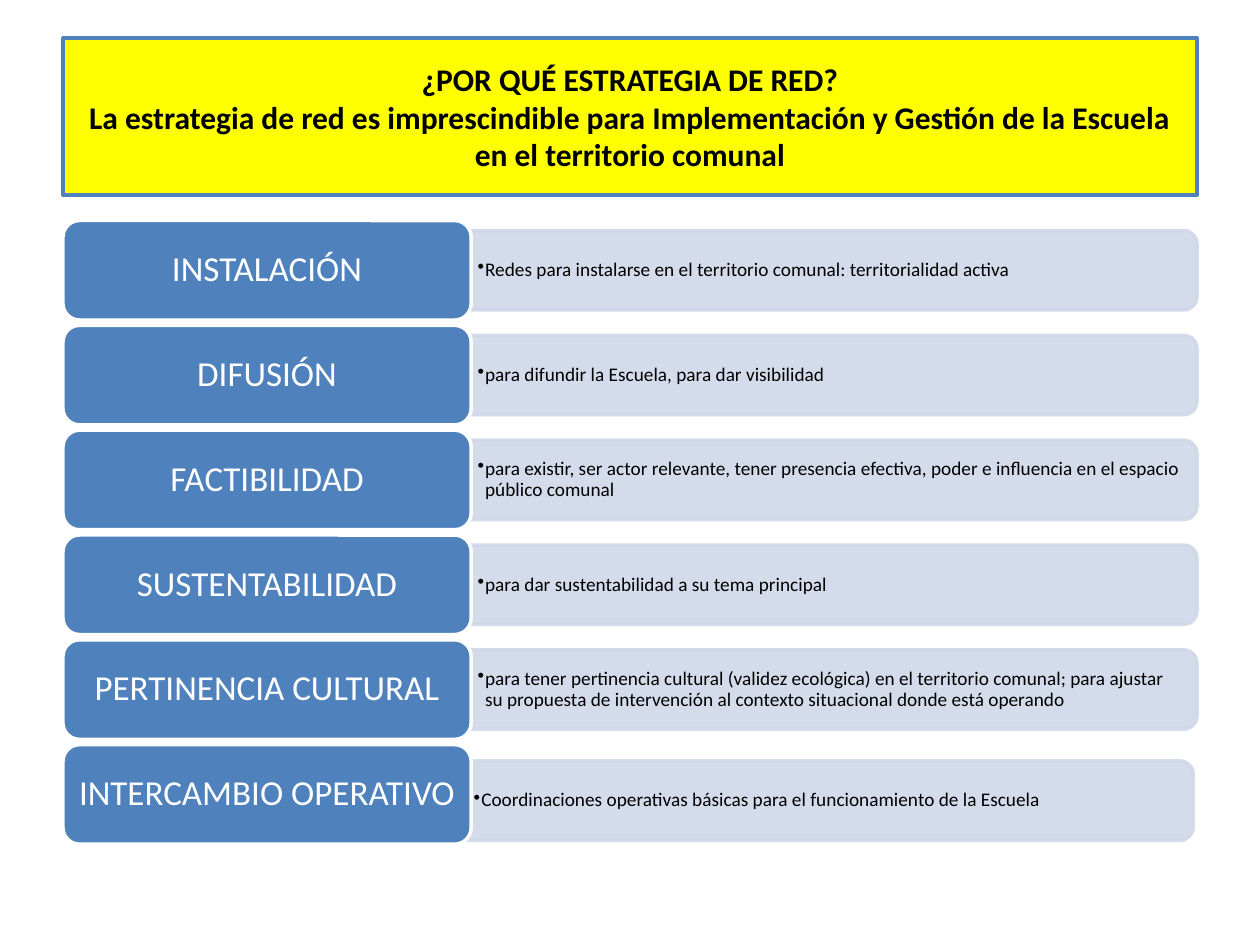
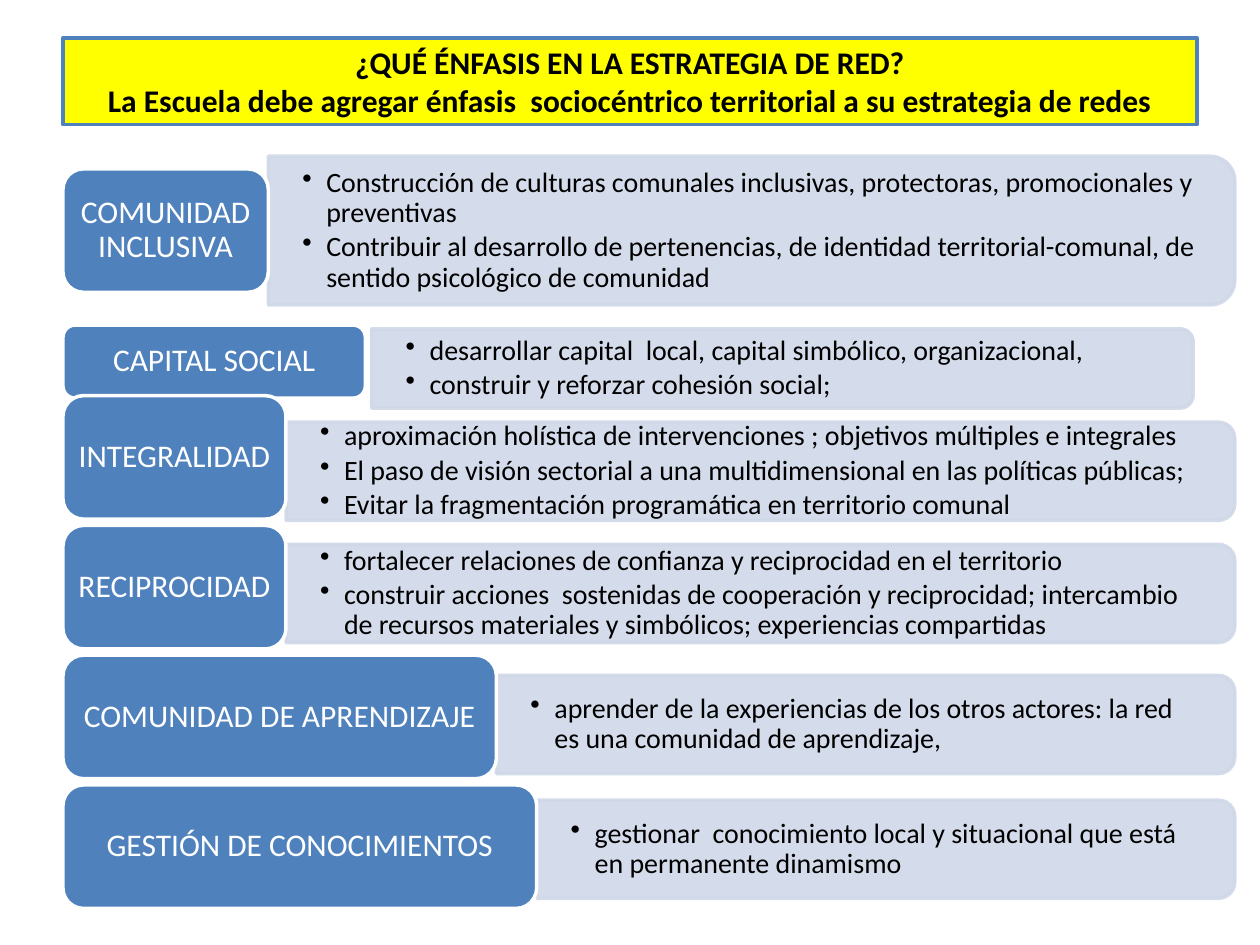
from collections import namedtuple

from lxml.etree import SubElement
from pptx import Presentation
from pptx.dml.color import RGBColor
from pptx.enum.shapes import MSO_SHAPE as Preset
from pptx.enum.text import MSO_ANCHOR as Anchor, MSO_AUTO_SIZE as AutoSize, PP_ALIGN as Align
from pptx.oxml.ns import qn
from pptx.util import Inches, Pt

Box = namedtuple("Box", "left top width height")
Style = namedtuple("Style", "label_size label_inset text_size text_inset indent")

YELLOW, BLUE, PALE, WHITE, BLACK = "FFFF00", "4F81BD", "D0D8E8", "FFFFFF", "000000"
FONT = "Calibri"
MARGIN = 0.5
PALE_ALPHA = "90000"

REASON_STYLE = Style(20, (0.08, 0.04), 11, (0.05, 0.02), 0.06)
EMPHASIS_STYLE = Style(18, (0.07, 0.04), 16, (0.27, 0.14), 0.19)

REASONS_TITLE = (
    "¿POR QUÉ ESTRATEGIA DE RED?\v"
    "La estrategia de red es imprescindible para Implementación y Gestión de la Escuela "
    "en el territorio comunal"
)
REASONS = [
    ("INSTALACIÓN", "Redes para instalarse en el territorio comunal: territorialidad activa"),
    ("DIFUSIÓN", "para difundir la Escuela, para dar visibilidad"),
    ("FACTIBILIDAD", "para existir, ser actor relevante, tener presencia efectiva, poder e "
     "influencia en el espacio público comunal"),
    ("SUSTENTABILIDAD", "para dar sustentabilidad a su tema principal"),
    ("PERTINENCIA CULTURAL", "para tener pertinencia cultural (validez ecológica) en el "
     "territorio comunal; para ajustar su propuesta de intervención al contexto situacional "
     "donde está operando"),
    ("INTERCAMBIO OPERATIVO",
     "Coordinaciones operativas básicas para el funcionamiento de la Escuela"),
]

EMPHASES_TITLE = (
    "¿QUÉ ÉNFASIS EN LA ESTRATEGIA DE RED?\v"
    "La Escuela debe agregar énfasis  sociocéntrico territorial a su estrategia de redes"
)
EMPHASES = [
    ("COMUNIDAD INCLUSIVA", Box(MARGIN, 1.34, 1.63, 0.98), Box(2.13, 1.24, 7.67, 1.18), [
        "Construcción de culturas comunales inclusivas, protectoras, promocionales y preventivas",
        "Contribuir al desarrollo de pertenencias, de identidad territorial-comunal, "
        "de sentido psicológico de comunidad"]),
    ("CAPITAL SOCIAL", Box(MARGIN, 2.58, 2.4, 0.58), Box(2.95, 2.61, 6.52, 0.63), [
        "desarrollar capital  local, capital simbólico, organizacional,",
        "construir y reforzar cohesión social;"]),
    ("INTEGRALIDAD", Box(MARGIN, 3.14, 1.77, 0.98), Box(2.27, 3.35, 7.53, 0.78), [
        "aproximación holística de intervenciones ; objetivos múltiples e integrales",
        "El paso de visión sectorial a una multidimensional en las políticas públicas;",
        "Evitar la fragmentación programática en territorio comunal"]),
    ("RECIPROCIDAD", Box(MARGIN, 4.17, 1.77, 0.98), Box(2.27, 4.32, 7.53, 0.78), [
        "fortalecer relaciones de confianza y reciprocidad en el territorio",
        "construir acciones  sostenidas de cooperación y reciprocidad; intercambio de recursos "
        "materiales y simbólicos; experiencias compartidas"]),
    ("COMUNIDAD DE APRENDIZAJE", Box(MARGIN, 5.2, 3.44, 0.98), Box(3.94, 5.36, 5.86, 0.78), [
        "aprender de la experiencias de los otros actores: la red es una comunidad de "
        "aprendizaje,"]),
    ("GESTIÓN DE CONOCIMIENTOS", Box(MARGIN, 6.23, 3.76, 0.98), Box(4.26, 6.35, 5.54, 0.78), [
        "gestionar  conocimiento local y situacional que está en permanente dinamismo"]),
]


def color(value):
    """Turn a hex string into a colour."""
    return RGBColor.from_string(value)


def set_all(target, values):
    """Set each attribute of the target from a dict."""
    for name, value in values.items():
        setattr(target, name, value)


def inches(box):
    """Give the sides of a box as lengths."""
    return [Inches(side) for side in box]


def paint(shape, fill, line):
    """Give a shape a solid fill and a two-point outline."""
    shape.fill.solid()
    shape.fill.fore_color.rgb = color(fill)
    shape.line.color.rgb = color(line)
    shape.line.width = Pt(2)


def set_frame(frame, inset):
    """Centre a wrapping text frame vertically inside its insets."""
    across, down = (Inches(side) for side in inset)
    set_all(frame, {
        "word_wrap": True, "auto_size": AutoSize.NONE, "vertical_anchor": Anchor.MIDDLE,
        "margin_left": across, "margin_right": across,
        "margin_top": down, "margin_bottom": down,
    })


def set_font(font, size, ink, bold=False):
    """Apply the deck's typeface with a size, colour and weight."""
    set_all(font, {"name": FONT, "size": Pt(size), "bold": bold})
    font.color.rgb = color(ink)


def add_title(page, text, height):
    """Turn the title placeholder into the yellow banner."""
    title = page.shapes.title
    banner = inches(Box(MARGIN, 0.3, 9, height))
    set_all(title, dict(zip(Box._fields, banner)))
    paint(title, YELLOW, BLUE)
    set_frame(title.text_frame, (0.1, 0.05))
    para = title.text_frame.paragraphs[0]
    para.text = text
    para.alignment = Align.CENTER
    for span in para.runs:
        set_font(span.font, 18, BLACK, True)


def add_band(page, box):
    """Draw a pale band rounded on its right side."""
    center_x, center_y = box.left + box.width / 2, box.top + box.height / 2
    upright = Box(center_x - box.height / 2, center_y - box.width / 2, box.height, box.width)
    band = page.shapes.add_shape(Preset.ROUND_2_SAME_RECTANGLE, *inches(upright))
    band.rotation = 90
    band.shadow.inherit = False
    paint(band, PALE, PALE)
    for tint in band._element.spPr.iter(qn("a:srgbClr")):
        SubElement(tint, qn("a:alpha"), val=PALE_ALPHA)


def add_bullets(page, box, items, style):
    """Write the bulleted items over a band."""
    area = Box(box.left, box.top + 0.03, box.width - 0.04, box.height - 0.06)
    frame = page.shapes.add_textbox(*inches(area)).text_frame
    set_frame(frame, style.text_inset)
    for index, item in enumerate(items):
        para = frame.add_paragraph() if index else frame.paragraphs[0]
        props = para._p.get_or_add_pPr()
        props.set("marL", str(Inches(style.indent)))
        props.set("indent", str(-Inches(style.indent)))
        SubElement(props, qn("a:buChar"), char="•")
        para.line_spacing = 0.9
        if index:
            para.space_before = Pt(0.15 * style.text_size)
        span = para.add_run()
        span.text = item
        set_font(span.font, style.text_size, BLACK)


def add_label(page, box, text, style):
    """Draw a blue rounded label with centred white text."""
    label = page.shapes.add_shape(Preset.ROUNDED_RECTANGLE, *inches(box))
    label.shadow.inherit = False
    paint(label, BLUE, WHITE)
    set_frame(label.text_frame, style.label_inset)
    para = label.text_frame.paragraphs[0]
    set_all(para, {"alignment": Align.CENTER, "line_spacing": 0.9})
    span = para.add_run()
    span.text = text
    set_font(span.font, style.label_size, WHITE)


def add_row(page, label, label_box, band_box, items, style):
    """Place a band, its bullets and its label."""
    add_band(page, band_box)
    add_bullets(page, band_box, items, style)
    add_label(page, label_box, label, style)


def add_page(deck, title, title_height):
    """Add a title-only slide with its banner."""
    page = deck.slides.add_slide(deck.slide_layouts[5])
    add_title(page, title, title_height)
    return page


def build_reasons(deck):
    """Build the slide of reasons as evenly spaced rows."""
    page = add_page(deck, REASONS_TITLE, 1.25)
    pitch = 0.832
    for index, (label, text) in enumerate(REASONS):
        label_box = Box(MARGIN, 1.75 + pitch * index, 3.24, 0.79)
        band_box = Box(3.74, label_box.top + 0.08, 5.76, 0.63)
        if index == len(REASONS) - 1:
            band_box = band_box._replace(left=3.71, top=6.04)
        add_row(page, label, label_box, band_box, [text], REASON_STYLE)


def build_emphases(deck):
    """Build the slide of emphases with labels of varied width."""
    page = add_page(deck, EMPHASES_TITLE, 0.69)
    for label, label_box, band_box, items in EMPHASES:
        add_row(page, label, label_box, band_box, items, EMPHASIS_STYLE)


def main():
    """Build and save the deck."""
    deck = Presentation()
    set_all(deck, {"slide_width": Inches(10), "slide_height": Inches(7.5)})
    build_reasons(deck)
    build_emphases(deck)
    deck.save("out.pptx")


if __name__ == "__main__":
    main()
